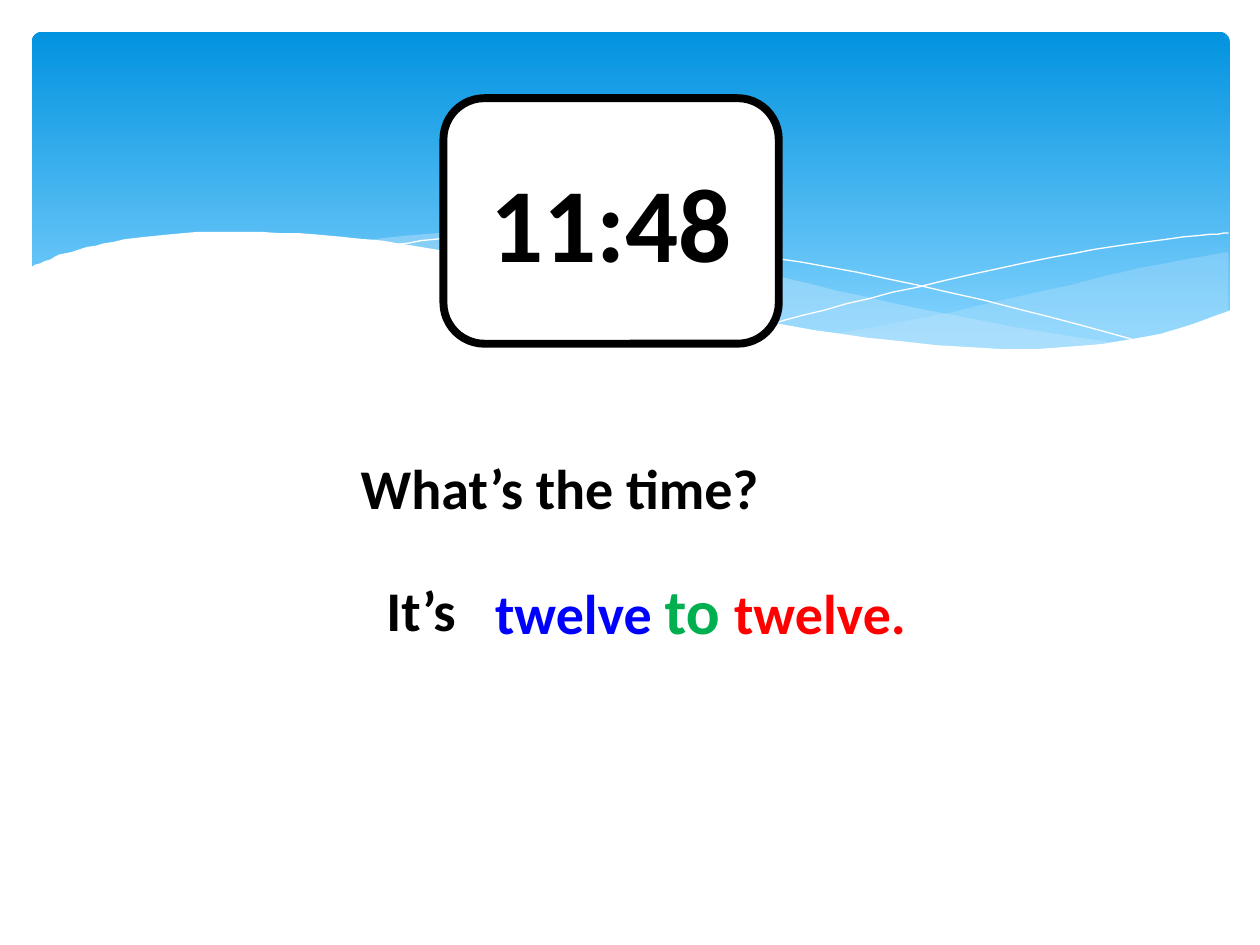
from dataclasses import dataclass

from lxml import etree
from pptx import Presentation
from pptx.dml.color import RGBColor
from pptx.enum import shapes, text
from pptx.oxml import ns
from pptx.util import Cm, Pt


@dataclass(frozen=True)
class Theme:
    font: str = "Calibri"
    black: str = "000000"
    white: str = "FFFFFF"
    sky_top: str = "0293E0"
    sky_bottom: str = "83D3FE"
    mist: str = "C6E7FC"
    minutes: str = "0000FF"
    link: str = "00B050"
    hour: str = "FF0000"
    clock_size: int = 60
    link_size: int = 36
    body_size: int = 32
    frame_width: float = 4.5


THEME = Theme()
UNIT = Cm(25.4) / 1000  # wave knots lie on a grid 1000 units wide

# Knots of the wave edges, joined by smooth curves
NEAR_MIST_TOP = [(975, 200), (935, 207), (891, 216), (832, 230), (779, 242),
                 (729, 253), (661, 265)]
NEAR_MIST_BOTTOM = [(661, 265), (705, 271), (757, 276), (803, 278), (854, 276),
                    (897, 270), (935, 262), (975, 247)]
FAR_MIST_TOP = [(893, 273), (807, 260), (706, 240), (629, 222), (569, 208),
                (514, 198), (465, 191), (420, 187), (361, 185), (313, 188),
                (286, 191)]
FAR_MIST_BOTTOM = [(286, 191), (342, 199), (404, 211), (449, 222), (530, 240),
                   (601, 255), (665, 266), (722, 274), (785, 278), (838, 278),
                   (893, 273)]
FALLING_LINE = [(309, 195), (344, 190), (387, 187), (433, 187), (489, 190),
                (556, 197), (636, 208), (727, 226), (831, 251), (907, 272)]
RISING_LINE = [(613, 257), (672, 241), (748, 223), (836, 204), (895, 194),
               (951, 187), (975, 185)]
WHITE_WAVE_TOP = [(977, 246), (950, 256), (910, 267), (863, 274), (809, 277),
                  (744, 274), (668, 265), (579, 250), (503, 233), (447, 220),
                  (391, 207), (340, 197), (292, 190), (250, 186), (193, 184),
                  (146, 185), (106, 189), (76, 195), (52, 201), (36, 207),
                  (23, 213)]
WHITE_WAVE_BASE = [(23, 329), (977, 329)]


def rgb(color):
    return RGBColor.from_string(color)


def smooth(knots, steps=4):
    """Return points on a Catmull-Rom curve through the knots."""
    padded = [knots[0], *knots, knots[-1]]
    points = [knots[0]]
    for a, b, c, d in zip(padded, padded[1:], padded[2:], padded[3:]):
        for step in range(1, steps + 1):
            t = step / steps
            points.append(tuple(
                (2 * q + (r - p) * t + (2 * p - 5 * q + 4 * r - s) * t ** 2
                 + (3 * q - p - 3 * r + s) * t ** 3) / 2
                for p, q, r, s in zip(a, b, c, d)))
    return points


def add_wave(slide, points, fill=None, opacity=100):
    """Add a filled wave, or a white hairline when there is no fill."""
    builder = slide.shapes.build_freeform(*points[0], scale=UNIT)
    builder.add_line_segments(points[1:], close=fill is not None)
    wave = builder.convert_to_shape()
    wave.shadow.inherit = False
    if fill is None:
        wave.fill.background()
        wave.line.color.rgb = rgb(THEME.white)
        wave.line.width = Pt(0)
        return
    wave.line.fill.background()
    wave.fill.solid()
    wave.fill.fore_color.rgb = rgb(fill)
    if opacity < 100:
        color = wave.fill._xPr.find(".//" + ns.qn("a:srgbClr"))
        etree.SubElement(color, ns.qn("a:alpha"), val=str(opacity * 1000))


def add_panel(slide, kind, box, fill=None, frame=None):
    panel = slide.shapes.add_shape(kind, *map(Cm, box))
    panel.shadow.inherit = False
    if fill:
        panel.fill.solid()
        panel.fill.fore_color.rgb = rgb(fill)
    if frame:
        panel.line.color.rgb = rgb(frame)
        panel.line.width = Pt(THEME.frame_width)
    else:
        panel.line.fill.background()
    return panel


def write(shape, runs, align=text.PP_ALIGN.LEFT, **frame_format):
    """Write one bold paragraph from (words, size, colour) runs."""
    frame = shape.text_frame
    for name, value in frame_format.items():
        setattr(frame, name, value)
    paragraph = frame.paragraphs[0]
    paragraph.alignment = align
    for words, size, color in runs:
        run = paragraph.add_run()
        run.text = words
        font_format = {"name": THEME.font, "size": Pt(size), "bold": True}
        for name, value in font_format.items():
            setattr(run.font, name, value)
        run.font.color.rgb = rgb(color)


def add_header(slide):
    sky = add_panel(slide, shapes.MSO_SHAPE.ROUNDED_RECTANGLE,
                    (0.64, 0.64, 24.15, 6.86))
    sky.adjustments[0] = 0.03
    sky.fill.gradient()
    sky.fill.gradient_angle = 270
    stops = [(0, THEME.sky_top), (0.9, THEME.sky_bottom)]
    for stop, (position, color) in zip(sky.fill.gradient_stops, stops):
        stop.position = position
        stop.color.rgb = rgb(color)

    add_wave(slide, smooth(NEAR_MIST_TOP) + smooth(NEAR_MIST_BOTTOM),
             THEME.mist, 29)
    add_wave(slide, smooth(FAR_MIST_TOP) + smooth(FAR_MIST_BOTTOM),
             THEME.mist, 40)
    for knots in (FALLING_LINE, RISING_LINE):
        add_wave(slide, smooth(knots))
    add_wave(slide, smooth(WHITE_WAVE_TOP) + WHITE_WAVE_BASE, THEME.white)


def add_clock(slide, time):
    clock = add_panel(slide, shapes.MSO_SHAPE.ROUNDED_RECTANGLE,
                      (8.94, 1.98, 6.76, 4.95), THEME.white, THEME.black)
    write(clock, [(time, THEME.clock_size, THEME.black)],
          text.PP_ALIGN.CENTER, vertical_anchor=text.MSO_ANCHOR.MIDDLE)


def add_question(slide, question):
    title = slide.shapes.title
    place = {"left": 6.76, "top": 9.02, "width": 10.72, "height": 1.62}
    for name, value in place.items():
        setattr(title, name, Cm(value))
    write(title, [(question, THEME.body_size, THEME.black)], word_wrap=True,
          vertical_anchor=text.MSO_ANCHOR.TOP,
          auto_size=text.MSO_AUTO_SIZE.SHAPE_TO_FIT_TEXT)


def add_answer(slide, opening, runs):
    lead = slide.shapes.add_textbox(*map(Cm, (7.54, 11.48, 2.18, 1.62)))
    write(lead, [(opening, THEME.body_size, THEME.black)], word_wrap=False,
          auto_size=text.MSO_AUTO_SIZE.SHAPE_TO_FIT_TEXT)
    answer = add_panel(slide, shapes.MSO_SHAPE.RECTANGLE,
                       (9.73, 11.3, 10.11, 1.98), THEME.white)
    write(answer, runs, vertical_anchor=text.MSO_ANCHOR.MIDDLE)


def main():
    prs = Presentation()
    prs.slide_width, prs.slide_height = Cm(25.4), Cm(19.05)
    slide = prs.slides.add_slide(prs.slide_layouts.get_by_name("Title Only"))

    # Sky and waves
    add_header(slide)

    # Time, question and answer
    add_clock(slide, "11:48")
    add_question(slide, " What’s the time?")
    add_answer(slide, "It’s", [
        ("twelve ", THEME.body_size, THEME.minutes),
        ("to ", THEME.link_size, THEME.link),
        ("twelve.", THEME.body_size, THEME.hour),
    ])
    prs.save("out.pptx")


if __name__ == "__main__":
    main()
